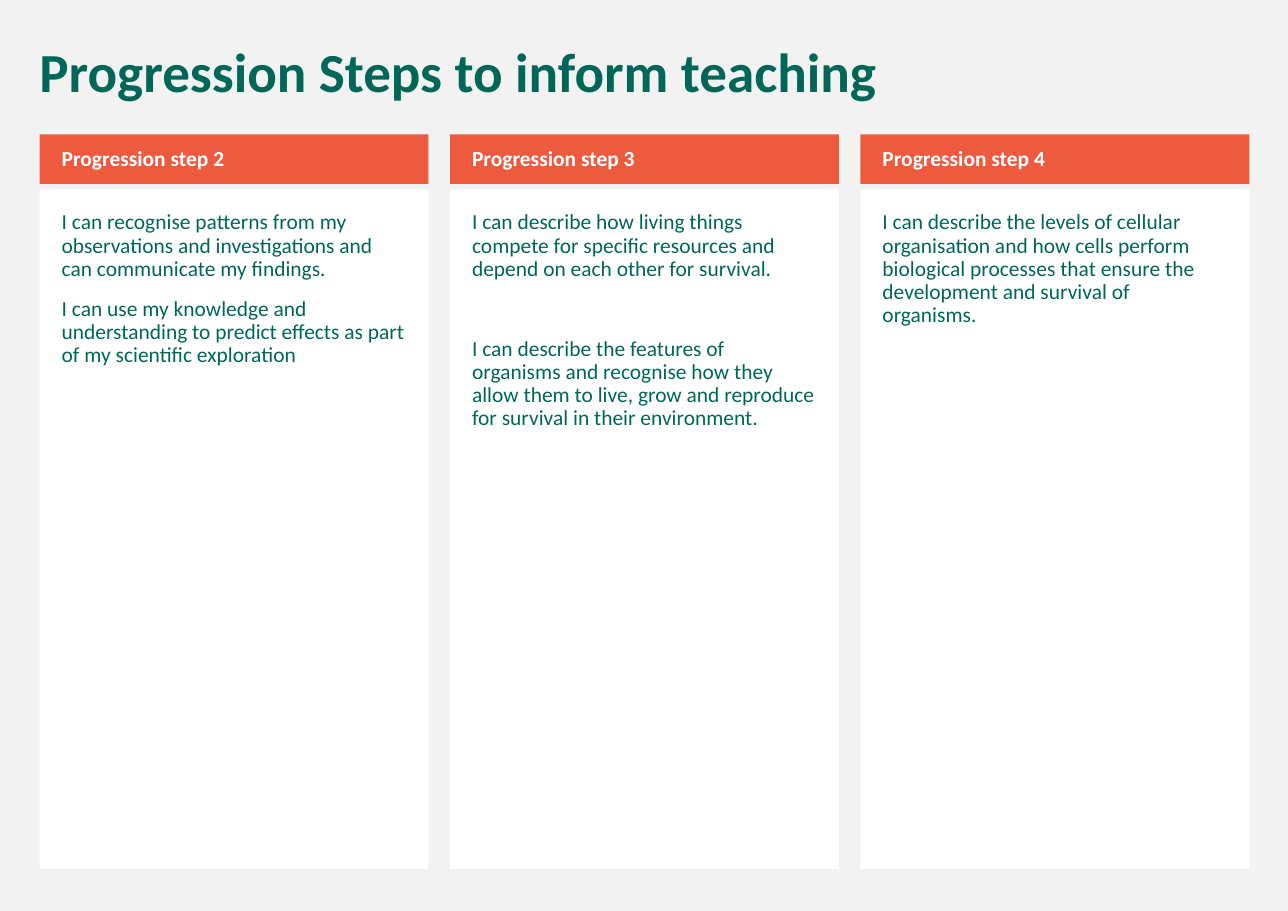
from pptx import Presentation
from pptx.dml.color import RGBColor
from pptx.enum.shapes import MSO_SHAPE
from pptx.enum.text import MSO_ANCHOR, PP_ALIGN
from pptx.util import Pt

PX = 4572
COLORS = {"background": "F2F2F2", "green": "006758", "orange": "ED5A3E", "white": "FFFFFF"}
COLUMN_LEFT, COLUMN_STEP, COLUMN_WIDTH = 72, 745, 706
STEPS = [
    ("Progression step 2", 11, [
        "I can recognise patterns from my observations and investigations and "
        "can communicate my findings.",
        "I can use my knowledge and understanding to predict effects as part "
        "of my scientific exploration",
    ]),
    ("Progression step 3", 37, [
        "I can describe how living things compete for specific resources and "
        "depend on each other for survival.",
        "I can describe the features of organisms and recognise how they allow them "
        "to live, grow and reproduce for survival in their environment.",
    ]),
    ("Progression step 4", 11, [
        "I can describe the levels of cellular organisation and how cells perform "
        "biological processes that ensure the development and survival of organisms.",
    ]),
]


def color(name):
    return RGBColor.from_string(COLORS[name])


def emu(*lengths):
    return [length * PX for length in lengths]


def write_text(shape, texts, size, color_name, insets, bold=False, gap=11, anchor=MSO_ANCHOR.TOP):
    frame = shape.text_frame
    frame.word_wrap = True
    frame.vertical_anchor = anchor
    frame.margin_left, frame.margin_top, frame.margin_right, frame.margin_bottom = emu(*insets)
    frame.text = "\n".join(texts)
    for index, paragraph in enumerate(frame.paragraphs):
        paragraph.alignment = PP_ALIGN.LEFT
        paragraph.line_spacing = 0.9
        paragraph.space_before = Pt(gap if index else 11)
        paragraph.font.name = "Calibri"
        paragraph.font.size = Pt(size)
        paragraph.font.bold = bold
        paragraph.font.color.rgb = color(color_name)


def add_panel(slide, left, top, height, fill_name):
    shape = slide.shapes.add_shape(MSO_SHAPE.RECTANGLE, *emu(left, top, COLUMN_WIDTH, height))
    shape.shadow.inherit = False
    shape.fill.solid()
    shape.fill.fore_color.rgb = color(fill_name)
    shape.line.fill.background()
    return shape


def add_step(slide, left, heading, gap, statements):
    body = add_panel(slide, left, 344, 1234, "white")
    write_text(body, statements, 14, "green", (40, 40, 40, 40), gap=gap)
    header = add_panel(slide, left, 244, 90, "orange")
    write_text(header, [heading], 14, "white", (40, 10, 20, 10), bold=True,
               anchor=MSO_ANCHOR.MIDDLE)


def add_title(slide, text):
    title = slide.shapes.add_textbox(*emu(52, 72, 2216, 130))
    write_text(title, [text], 36, "green", (20, 10, 20, 10), bold=True)


def main():
    presentation = Presentation()
    presentation.slide_width, presentation.slide_height = emu(2338, 1654)
    slide = presentation.slides.add_slide(presentation.slide_layouts[6])
    slide.background.fill.solid()
    slide.background.fill.fore_color.rgb = color("background")
    for index, (heading, gap, statements) in enumerate(STEPS):
        add_step(slide, COLUMN_LEFT + index * COLUMN_STEP, heading, gap, statements)
    add_title(slide, "Progression Steps to inform teaching")
    presentation.save("out.pptx")


if __name__ == "__main__":
    main()
